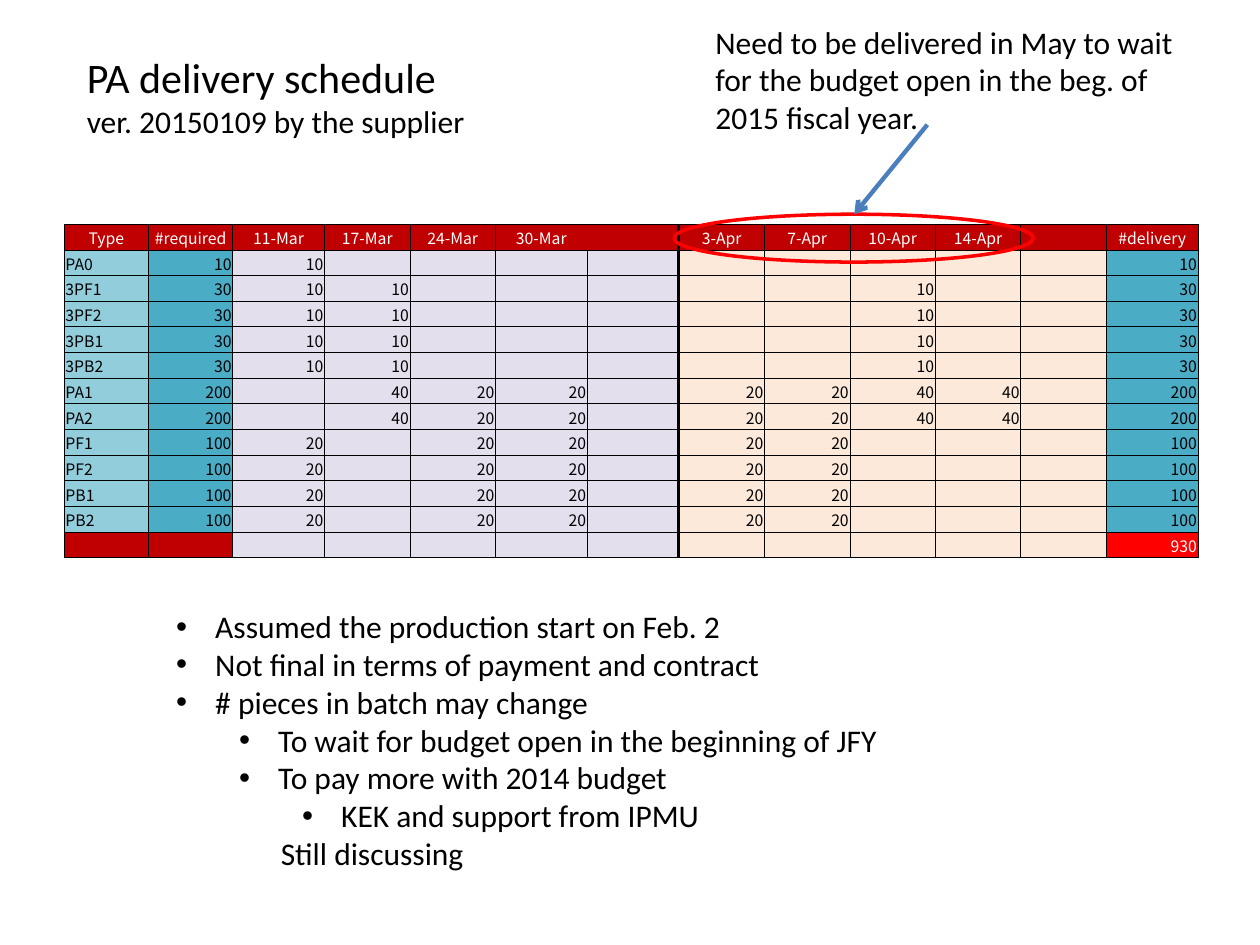
from pptx import Presentation
from pptx.dml.color import RGBColor
from pptx.enum import shapes, text
from pptx.oxml import ns, xmlchemy
from pptx.util import Inches, Pt

BLACK = RGBColor(0x00, 0x00, 0x00)
WHITE = RGBColor(0xFF, 0xFF, 0xFF)
RED = RGBColor(0xFF, 0x00, 0x00)
DARK_RED = RGBColor(0xC0, 0x00, 0x00)
LIGHT_TEAL = RGBColor(0x92, 0xCD, 0xDC)
TEAL = RGBColor(0x4B, 0xAC, 0xC6)
LAVENDER = RGBColor(0xE4, 0xDF, 0xEC)
PEACH = RGBColor(0xFD, 0xE9, 0xD9)
BLUE = RGBColor(0x4B, 0x7E, 0xBC)

# Table data: deliveries follow the header columns between the two totals
HEADER = ["Type", "#required", "11-Mar", "17-Mar", "24-Mar", "30-Mar", "",
          "3-Apr", "7-Apr", "10-Apr", "14-Apr", "", "#delivery"]
GROUPS = [
    (["PA0"], 10, {"11-Mar": 10}),
    (["3PF1", "3PF2", "3PB1", "3PB2"], 30, {"11-Mar": 10, "17-Mar": 10, "10-Apr": 10}),
    (["PA1", "PA2"], 200, {"17-Mar": 40, "24-Mar": 20, "30-Mar": 20, "3-Apr": 20,
                           "7-Apr": 20, "10-Apr": 40, "14-Apr": 40}),
    (["PF1", "PF2", "PB1", "PB2"], 100, {"11-Mar": 20, "24-Mar": 20, "30-Mar": 20,
                                         "3-Apr": 20, "7-Apr": 20}),
]
WEIGHTS = [67, 67, 73, 68, 68, 73, 73, 68, 68, 68, 68, 68, 73]
FILLS = [LIGHT_TEAL, TEAL] + [LAVENDER] * 5 + [PEACH] * 5 + [TEAL]
MARCH_END = 6  # last March column, closed by a thick rule


def schedule_rows():
    rows = [HEADER]
    for types, total, batches in GROUPS:
        for name in types:
            counts = [str(batches.get(day, "")) for day in HEADER[2:-1]]
            rows.append([name, str(total)] + counts + [str(total)])
    grand_total = sum(len(types) * total for types, total, _ in GROUPS)
    rows.append([""] * 12 + [str(grand_total)])
    return rows


def add_xml(parent, tag, **attrs):
    child = xmlchemy.OxmlElement(tag)
    for key, value in attrs.items():
        child.set(key, str(value))
    parent.append(child)
    return child


class SlideBuilder:
    body_font = "Calibri"
    table_font = "Noto Sans CJK JP"

    def __init__(self, prs):
        self.s = prs.slides.add_slide(prs.slide_layouts[6])

    def style(self, p, size, color=BLACK, font=body_font):
        p.font.size = Pt(size)
        p.font.name = font
        p.font.color.rgb = color

    def text_box(self, x, y, w, h, lines):
        """Each line is (text, size, left margin, bulleted)."""
        sp = self.s.shapes.add_textbox(Inches(x), Inches(y), Inches(w), Inches(h))
        tf = sp.text_frame
        tf.word_wrap = True
        for i, (words, size, margin, bulleted) in enumerate(lines):
            p = tf.paragraphs[0] if i == 0 else tf.add_paragraph()
            p.text = words
            pPr = p._p.get_or_add_pPr()
            pPr.set("marL", str(Inches(margin)))
            if bulleted:
                pPr.set("indent", str(Inches(-0.31)))
                add_xml(pPr, "a:buFont", typeface="Arial")
                add_xml(pPr, "a:buChar", char="•")
            self.style(p, size)

    def ellipse(self, x, y, w, h, color, width):
        sp = self.s.shapes.add_shape(shapes.MSO_SHAPE.OVAL, Inches(x), Inches(y),
                                     Inches(w), Inches(h))
        sp.shadow.inherit = False
        sp.fill.background()
        sp.line.color.rgb = color
        sp.line.width = Pt(width)

    def arrow(self, x1, y1, x2, y2, color, width):
        line = self.s.shapes.add_connector(shapes.MSO_CONNECTOR.STRAIGHT, Inches(x1),
                                           Inches(y1), Inches(x2), Inches(y2))
        line.line.color.rgb = color
        line.line.width = Pt(width)
        add_xml(line.line._get_or_add_ln(), "a:tailEnd", type="arrow")
        add_xml(line._element.spPr, "a:effectLst")

    def borders(self, cell, widths):
        tcPr = cell._tc.get_or_add_tcPr()
        for side, width in zip("LRTB", widths):
            ln = add_xml(tcPr, f"a:ln{side}", w=Pt(width))
            if width:
                add_xml(add_xml(ln, "a:solidFill"), "a:srgbClr", val=BLACK)
            else:
                add_xml(ln, "a:noFill")

    def cell(self, cell, words, fill, color, align, widths):
        self.borders(cell, widths)
        cell.fill.solid()
        cell.fill.fore_color.rgb = fill
        cell.margin_left = cell.margin_right = cell.margin_top = Inches(0.01)
        cell.margin_bottom = 0
        cell.vertical_anchor = text.MSO_ANCHOR.MIDDLE
        p = cell.text_frame.paragraphs[0]
        p.alignment = align
        if words:
            p.text = words
            self.style(p, 9, color, self.table_font)
        else:  # keeps empty rows from growing
            add_xml(p._p, "a:endParaRPr", sz=900)

    def schedule(self, x, y, w, h, rows):
        tbl = self.s.shapes.add_table(len(rows), len(HEADER), Inches(x), Inches(y),
                                      Inches(w), Inches(h)).table
        tbl.first_row = tbl.horz_banding = False
        for col, weight in zip(tbl.columns, WEIGHTS):
            col.width = Inches(w * weight / sum(WEIGHTS))
        last_row, last_col = len(rows) - 1, len(HEADER) - 1
        for i, row in enumerate(rows):
            tbl.rows[i].height = Inches(h / len(rows))
            for j, words in enumerate(row):
                fill, color = FILLS[j], BLACK
                align = text.PP_ALIGN.RIGHT if j else text.PP_ALIGN.LEFT
                if i == 0:
                    fill, color, align = DARK_RED, WHITE, text.PP_ALIGN.CENTER
                elif i == last_row and j < 2:
                    fill = DARK_RED
                elif i == last_row and j == last_col:
                    fill, color = RED, WHITE
                left = 2 if j == MARCH_END + 1 else 0.5
                right = 2 if j == MARCH_END else 0.5
                if i == 0 and j == MARCH_END:  # open between the last March headings
                    left = 0
                elif i == 0 and j == MARCH_END - 1:
                    right = 0
                self.cell(tbl.cell(i, j), words, fill, color, align,
                          (left, right, 0.5, 0.5))


def main():
    prs = Presentation()
    prs.slide_width, prs.slide_height = Inches(10), Inches(7.5)
    b = SlideBuilder(prs)

    # Delivery table
    b.schedule(0.51, 1.78, 9, 2.65, schedule_rows())

    # Remarks
    b.text_box(1.3, 4.77, 6.85, 2.22, [
        ("Assumed the production start on Feb. 2", 18, 0.31, True),
        ("Not final in terms of payment and contract", 18, 0.31, True),
        ("# pieces in batch may change", 18, 0.31, True),
        ("To wait for budget open in the beginning of JFY", 18, 0.81, True),
        ("To pay more with 2014 budget", 18, 0.81, True),
        ("KEK and support from IPMU", 18, 1.31, True),
        ("Still discussing", 18, 0.83, False),
    ])

    # April call-out
    b.ellipse(5.35, 1.7, 2.85, 0.38, RED, 2)
    b.text_box(5.58, 0.13, 4.04, 1.01, [
        ("Need to be delivered in May to wait for the budget open in the beg. of "
         "2015 fiscal year.", 18, 0, False)])
    b.arrow(7.36, 0.99, 6.78, 1.7, BLUE, 2.5)

    # Title
    b.text_box(0.59, 0.36, 4.25, 0.81, [
        ("PA delivery schedule", 24, 0, False),
        ("ver. 20150109 by the supplier", 18, 0, False)])

    prs.save("out.pptx")


if __name__ == "__main__":
    main()
